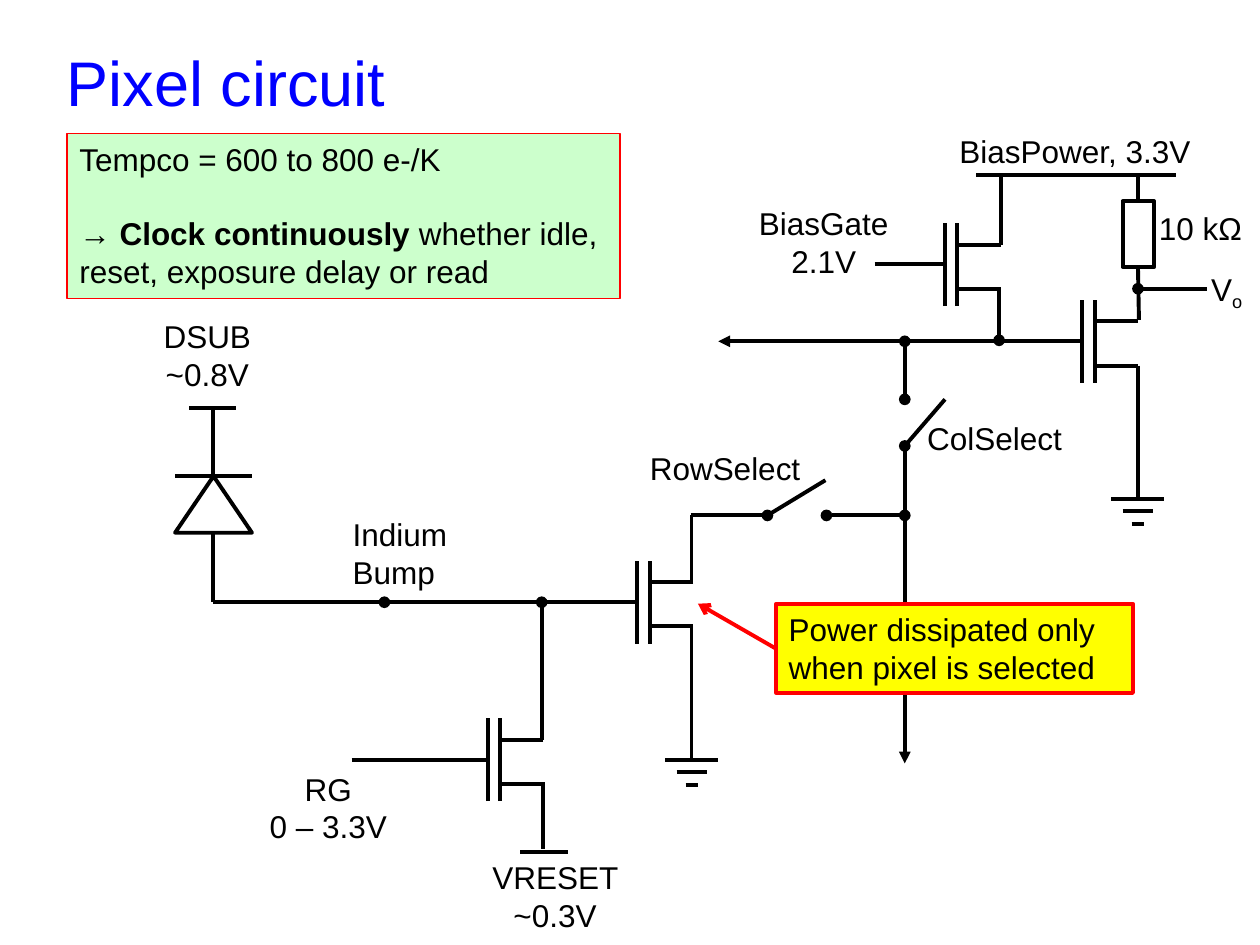
from dataclasses import dataclass

from lxml.etree import SubElement
from pptx import Presentation
from pptx.dml.color import RGBColor
from pptx.enum.shapes import MSO_CONNECTOR, MSO_SHAPE
from pptx.enum.text import MSO_ANCHOR, MSO_AUTO_SIZE, PP_ALIGN
from pptx.oxml.ns import qn
from pptx.util import Cm, Pt


@dataclass(frozen=True)
class Theme:
    font: str = "Arial"
    head: int = 36
    body: int = 18
    wire: float = 2.25
    thin: float = 0.75
    ink: str = "000000"
    blue: str = "0000FF"
    red: str = "FF0000"
    yellow: str = "FFFF00"
    green: str = "CCFFCC"


THEME = Theme()
DOT = ("oval", "med")
KNOB = ("oval", "lrg")
ARROW = ("triangle", "lrg")
OPEN = ("arrow", "med")
MID = PP_ALIGN.CENTER
LEFT = PP_ALIGN.LEFT


def grid(*vals):
    return [Cm(round(val * 2.54, 2)) for val in vals]


def write(frame, *paras, size=THEME.body, color=THEME.ink, align=LEFT,
          anchor=MSO_ANCHOR.TOP, gap=0, fit=MSO_AUTO_SIZE.SHAPE_TO_FIT_TEXT):
    frame.word_wrap = True
    frame.auto_size = fit
    frame.vertical_anchor = anchor
    for num, runs in enumerate(paras):
        para = frame.add_paragraph() if num else frame.paragraphs[0]
        para.alignment = align
        para.space_before = Pt(gap if num else 0)
        for part in [runs] if isinstance(runs, str) else runs:
            words, style = (part, "") if isinstance(part, str) else part
            run = para.add_run()
            run.text = words
            run.font.name = THEME.font
            run.font.size = Pt(size)
            run.font.bold = style == "bold"
            run.font.color.rgb = RGBColor.from_string(color)
            if style == "sub":
                run.font._element.set("baseline", "-25000")


def label(slide, box, *paras, **form):
    write(slide.shapes.add_textbox(*grid(*box)).text_frame, *paras, **form)


def shape(slide, kind, box, fill=None, color=THEME.ink, width=THEME.wire):
    item = slide.shapes.add_shape(kind, *grid(*box))
    item.shadow.inherit = False
    if fill:
        item.fill.solid()
        item.fill.fore_color.rgb = RGBColor.from_string(fill)
    else:
        item.fill.background()
    item.line.color.rgb = RGBColor.from_string(color)
    item.line.width = Pt(width)
    return item


def wire(slide, x1, y1, x2, y2, head=None, tail=None, color=THEME.ink):
    item = slide.shapes.add_connector(
        MSO_CONNECTOR.STRAIGHT, *grid(x1, y1, x2, y2))
    item.line.color.rgb = RGBColor.from_string(color)
    item.line.width = Pt(THEME.wire)
    line = item.line._get_or_add_ln()
    for tag, end in (("a:headEnd", head), ("a:tailEnd", tail)):
        if end:
            kind, size = end
            SubElement(line, qn(tag), type=kind, w=size, len=size)
    SubElement(item._element.spPr, qn("a:effectLst"))


def fet(slide, start, x, y, head=None):
    wire(slide, start, y, x, y, head=head)
    for bar in (x, x + 0.1):
        wire(slide, bar, y + 0.33, bar, y - 0.33)
    for pin in (y - 0.16, y + 0.19):
        wire(slide, x + 0.44, pin, x + 0.1, pin)


def ground(slide, x, top, y):
    wire(slide, x, top, x, y)
    for num, half in enumerate((0.21, 0.12, 0.05)):
        step = y + 0.1 * num
        wire(slide, x - half, step, x + half, step)


def diode(slide):
    label(slide, (1, 2.47, 1.29, 0.71), "DSUB ~0.8V", align=MID)
    wire(slide, 1.5, 3.24, 1.87, 3.24)
    wire(slide, 1.69, 3.24, 1.69, 3.78)
    wire(slide, 1.39, 3.78, 2, 3.78)
    shape(slide, MSO_SHAPE.ISOSCELES_TRIANGLE, (1.39, 3.78, 0.61, 0.45))
    wire(slide, 1.69, 4.23, 1.69, 4.78)
    wire(slide, 1.69, 4.78, 3.05, 4.78, tail=KNOB)
    label(slide, (2.7, 4.04, 1.05, 0.71), "Indium Bump")


def reset(slide):
    fet(slide, 2.79, 3.87, 6.03)
    wire(slide, 4.3, 5.87, 4.3, 4.78, tail=DOT)
    wire(slide, 4.31, 6.21, 4.31, 6.74)
    wire(slide, 4.13, 6.76, 4.51, 6.76)
    label(slide, (3.76, 6.76, 1.29, 0.71), "VRESET ~0.3V", align=MID)
    label(slide, (1.96, 6.06, 1.29, 0.71), "RG", "0 – 3.3V", align=MID)


def select(slide):
    fet(slide, 3.05, 5.06, 4.78)
    ground(slide, 5.49, 4.97, 6.03)
    wire(slide, 5.49, 4.62, 5.49, 4.09)
    wire(slide, 5.48, 4.09, 6.09, 4.09, tail=KNOB)
    wire(slide, 6.11, 4.08, 6.55, 3.81)
    wire(slide, 7.18, 4.09, 6.56, 4.09, head=DOT, tail=KNOB)
    wire(slide, 7.18, 3.54, 7.18, 6.06, head=KNOB, tail=ARROW)
    wire(slide, 7.18, 3.54, 7.5, 3.17)
    wire(slide, 7.18, 3.17, 7.18, 2.71, head=KNOB, tail=DOT)
    label(slide, (5.06, 3.51, 1.62, 0.4), "RowSelect")
    label(slide, (7.26, 3.28, 1.62, 0.4), "ColSelect")


def output(slide):
    fet(slide, 5.7, 8.59, 2.71, head=ARROW)
    fet(slide, 6.94, 7.5, 2.1)
    wire(slide, 7.93, 2.29, 7.93, 2.7, tail=DOT)
    wire(slide, 7.94, 1.39, 7.94, 1.94)
    wire(slide, 7.75, 1.39, 9.33, 1.39)
    shape(slide, MSO_SHAPE.RECTANGLE, (8.91, 1.6, 0.25, 0.52))
    wire(slide, 9.03, 1.39, 9.03, 1.6)
    wire(slide, 9.03, 2.12, 9.04, 2.54)
    wire(slide, 9.03, 2.29, 9.58, 2.29, head=DOT)
    ground(slide, 9.03, 2.9, 3.96)
    label(slide, (9.38, 2.09, 0.71, 0.4), ["V", ("o", "sub")], align=MID)
    label(slide, (5.77, 1.57, 1.53, 0.71), "BiasGate 2.1V", align=MID)
    label(slide, (7.38, 1, 2.3, 0.4), "BiasPower, 3.3V", align=MID)
    label(slide, (9.1, 1.61, 0.91, 0.4), "10 kΩ")


def notes(slide):
    power = shape(slide, MSO_SHAPE.RECTANGLE, (6.16, 4.79, 2.83, 0.71),
                  fill=THEME.yellow, color=THEME.red)
    write(power.text_frame, "Power dissipated only when pixel is selected")
    wire(slide, 6.16, 5.15, 5.54, 4.79, tail=OPEN, color=THEME.red)
    clock = shape(slide, MSO_SHAPE.RECTANGLE, (0.53, 1.06, 4.39, 1.31),
                  fill=THEME.green, color=THEME.red, width=THEME.thin)
    write(clock.text_frame, "Tempco = 600 to 800 e-/K",
          [("→ Clock continuously ", "bold"),
           "whether idle, reset, exposure delay or read"], gap=21)


def main():
    deck = Presentation()
    deck.slide_width, deck.slide_height = grid(10, 7.5)
    slide = deck.slides.add_slide(deck.slide_layouts[5])
    title = slide.shapes.title
    title.left, title.top, title.width, title.height = grid(
        0.43, 0.23, 9.08, 0.83)
    write(title.text_frame, "Pixel circuit", size=THEME.head,
          color=THEME.blue, anchor=MSO_ANCHOR.MIDDLE, fit=MSO_AUTO_SIZE.NONE)
    for draw in (diode, reset, select, output, notes):
        draw(slide)
    deck.save("out.pptx")


if __name__ == "__main__":
    main()
